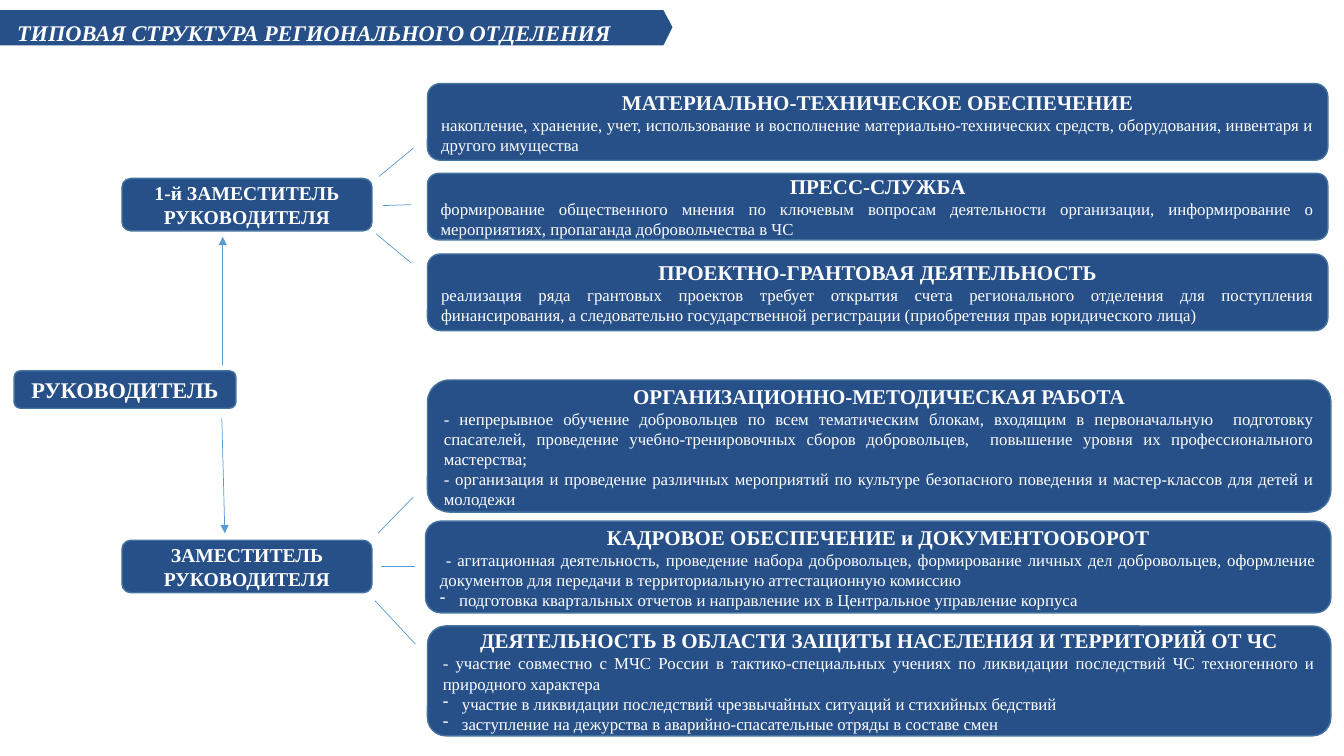
from dataclasses import dataclass

from lxml.etree import SubElement
from pptx import Presentation
from pptx.dml.color import RGBColor
from pptx.enum.shapes import MSO_CONNECTOR as Conn, MSO_SHAPE as Shape
from pptx.enum.text import MSO_ANCHOR as Anchor, PP_ALIGN as Align
from pptx.oxml.ns import qn
from pptx.util import Inches, Pt

FONT = "Times New Roman"
COLORS = {"navy": "275089", "edge": "43739E", "link": "5B9BD5", "text": "FFFFFF"}


@dataclass
class Box:
    left: float
    top: float
    width: float
    height: float
    heading: str
    size: float = 15
    body: tuple[str, ...] = ()
    bullets: tuple[str, ...] = ()


@dataclass
class Link:
    x1: float
    y1: float
    x2: float
    y2: float
    arrow: bool = False


# Leader and deputies
POSTS = [
    Box(0.14, 3.68, 2.2, 0.37, "РУКОВОДИТЕЛЬ", 16),
    Box(1.21, 1.77, 2.48, 0.52, "1-й ЗАМЕСТИТЕЛЬ РУКОВОДИТЕЛЯ", 14),
    Box(1.21, 5.36, 2.48, 0.52, "ЗАМЕСТИТЕЛЬ РУКОВОДИТЕЛЯ", 14),
]

# Areas of work
AREAS = [
    Box(4.24, 0.83, 8.93, 0.76, "МАТЕРИАЛЬНО-ТЕХНИЧЕСКОЕ ОБЕСПЕЧЕНИЕ", body=(
        "накопление, хранение, учет, использование и восполнение материально-технических "
        "средств, оборудования, инвентаря и другого имущества",)),
    Box(4.24, 1.72, 8.93, 0.66, "ПРЕСС-СЛУЖБА", body=(
        "формирование общественного мнения по ключевым вопросам деятельности организации, "
        "информирование о мероприятиях, пропаганда добровольчества в ЧС",)),
    Box(4.24, 2.52, 8.93, 0.76, "ПРОЕКТНО-ГРАНТОВАЯ ДЕЯТЕЛЬНОСТЬ", body=(
        "реализация ряда грантовых проектов требует открытия счета регионального отделения "
        "для поступления финансирования, а следовательно государственной регистрации "
        "(приобретения прав юридического лица)",)),
    Box(4.24, 3.77, 8.96, 1.31, "ОРГАНИЗАЦИОННО-МЕТОДИЧЕСКАЯ РАБОТА", body=(
        "- непрерывное обучение добровольцев по всем тематическим блокам, входящим в "
        "первоначальную  подготовку спасателей, проведение учебно-тренировочных сборов "
        "добровольцев,  повышение уровня их профессионального мастерства;",
        "- организация и проведение различных мероприятий по культуре безопасного поведения "
        "и мастер-классов для детей и молодежи")),
    Box(4.22, 5.17, 8.98, 0.91, "КАДРОВОЕ ОБЕСПЕЧЕНИЕ и ДОКУМЕНТООБОРОТ", body=(
        " - агитационная деятельность, проведение набора добровольцев, формирование личных "
        "дел добровольцев, оформление документов для передачи в территориальную "
        "аттестационную комиссию",), bullets=(
        "подготовка квартальных отчетов и направление их в Центральное управление корпуса",)),
    Box(4.24, 6.21, 8.96, 1.09,
        "ДЕЯТЕЛЬНОСТЬ В ОБЛАСТИ ЗАЩИТЫ НАСЕЛЕНИЯ И ТЕРРИТОРИЙ ОТ ЧС", body=(
            "- участие совместно с МЧС России в тактико-специальных учениях по ликвидации "
            "последствий ЧС техногенного и природного характера",), bullets=(
            "участие в ликвидации последствий чрезвычайных ситуаций и стихийных бедствий",
            "заступление на дежурства в аварийно-спасательные отряды в составе смен")),
]

LINKS = [
    Link(3.76, 1.75, 4.1, 1.47),
    Link(3.8, 2.04, 4.08, 2.03),
    Link(3.73, 2.32, 4.08, 2.61),
    Link(3.75, 5.29, 4.1, 4.93),
    Link(3.78, 5.62, 4.12, 5.62),
    Link(3.72, 5.96, 4.12, 6.39),
    Link(2.21, 3.62, 2.21, 2.35, arrow=True),
    Link(2.2, 4.15, 2.23, 5.29, arrow=True),
]

BANNER = [(0, 0.1), (6.58, 0.1), (6.67, 0.27), (6.58, 0.45), (0, 0.45)]
TITLE = "ТИПОВАЯ СТРУКТУРА РЕГИОНАЛЬНОГО ОТДЕЛЕНИЯ"


def color(name: str) -> RGBColor:
    return RGBColor.from_string(COLORS[name])


def style_text(p, size: float, bold: bool = False, italic: bool = False) -> None:
    for r in p.runs:
        r.font.name, r.font.size = FONT, Pt(size)
        r.font.bold, r.font.italic = bold, italic
        r.font.color.rgb = color("text")


def add_bullet(p) -> None:
    pPr = p._p.get_or_add_pPr()
    pPr.set("marL", str(Inches(0.19)))
    pPr.set("indent", str(Inches(-0.19)))
    SubElement(pPr, qn("a:buFontTx"))
    SubElement(pPr, qn("a:buChar"), char="-")


def add_box(s, box: Box) -> None:
    sp = s.shapes.add_shape(Shape.ROUNDED_RECTANGLE, Inches(box.left), Inches(box.top),
                            Inches(box.width), Inches(box.height))
    sp.shadow.inherit = False
    sp.fill.solid()
    sp.fill.fore_color.rgb = color("navy")
    sp.line.color.rgb = color("edge")
    sp.line.width = Pt(1)
    tf = sp.text_frame
    tf.word_wrap = True
    tf.vertical_anchor = Anchor.MIDDLE
    tf.text = box.heading
    tf.paragraphs[0].alignment = Align.CENTER
    style_text(tf.paragraphs[0], box.size, bold=True)
    for i, line in enumerate(box.body + box.bullets):
        p = tf.add_paragraph()
        p.text = line
        p.alignment = Align.JUSTIFY
        style_text(p, 12)
        if i >= len(box.body):
            add_bullet(p)


def add_link(s, link: Link) -> None:
    line = s.shapes.add_connector(Conn.STRAIGHT, Inches(link.x1), Inches(link.y1),
                                  Inches(link.x2), Inches(link.y2))
    line.line.color.rgb = color("link")
    line.line.width = Pt(0.5)
    if link.arrow:
        SubElement(line.line._get_or_add_ln(), qn("a:tailEnd"), type="triangle")
    SubElement(line._element.spPr, qn("a:effectLst"))


def add_title(s) -> None:
    points = [(Inches(x), Inches(y)) for x, y in BANNER]
    builder = s.shapes.build_freeform(*points[0])
    builder.add_line_segments(points[1:], close=True)
    banner = builder.convert_to_shape()
    banner.shadow.inherit = False
    banner.fill.solid()
    banner.fill.fore_color.rgb = color("navy")
    banner.line.fill.background()

    tf = s.shapes.add_textbox(Inches(0.17), Inches(0.01), Inches(6.06), Inches(0.39)).text_frame
    tf.word_wrap = True
    tf.margin_left = tf.margin_right = tf.margin_top = tf.margin_bottom = 0
    tf.text = TITLE
    p = tf.paragraphs[0]
    p.line_spacing = Pt(32.1)
    style_text(p, 16, bold=True, italic=True)


def main() -> None:
    prs = Presentation()
    prs.slide_width, prs.slide_height = Inches(13.33), Inches(7.5)
    s = prs.slides.add_slide(prs.slide_layouts[6])
    for box in POSTS + AREAS:
        add_box(s, box)
    for link in LINKS:
        add_link(s, link)
    add_title(s)
    prs.save("out.pptx")


if __name__ == "__main__":
    main()
